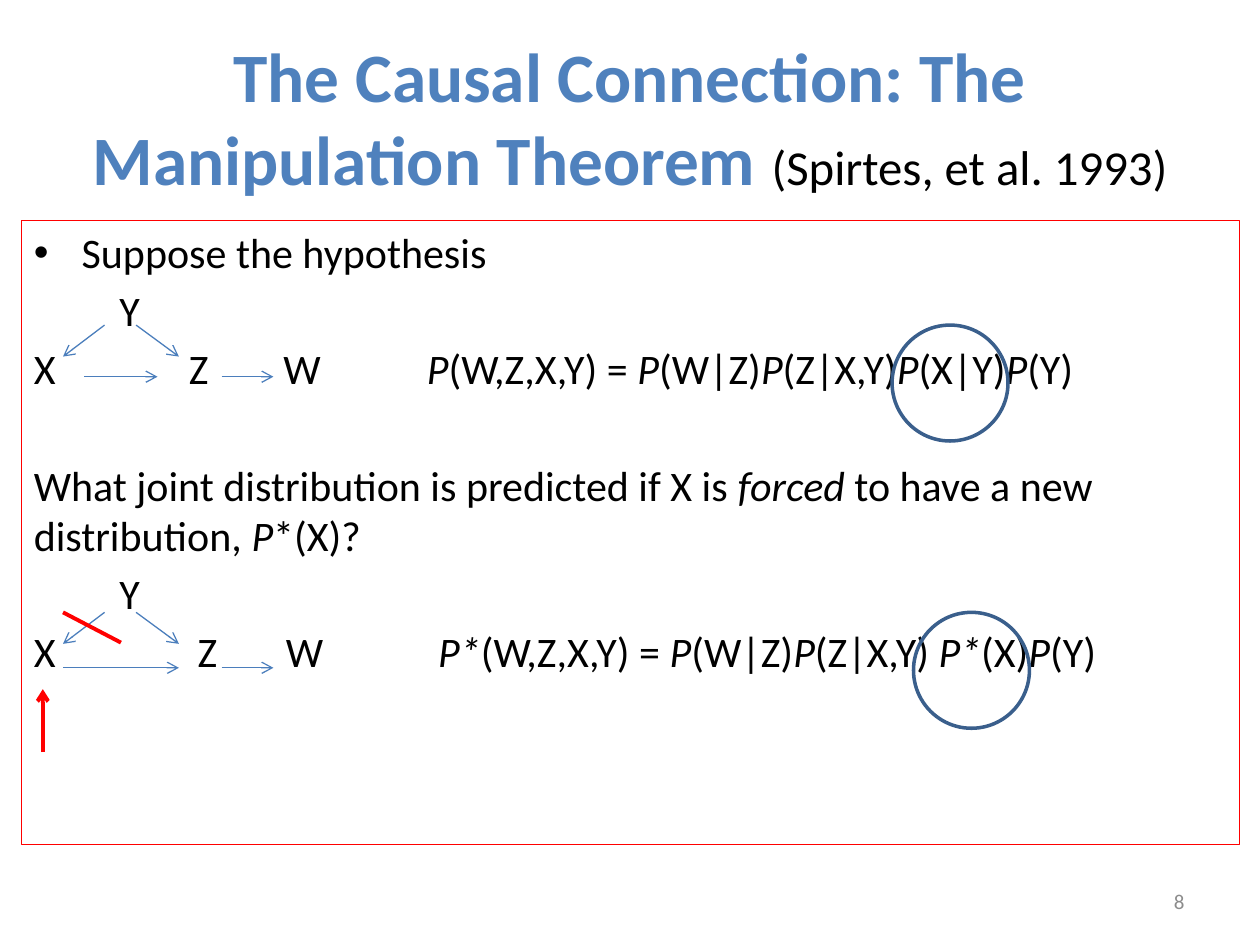
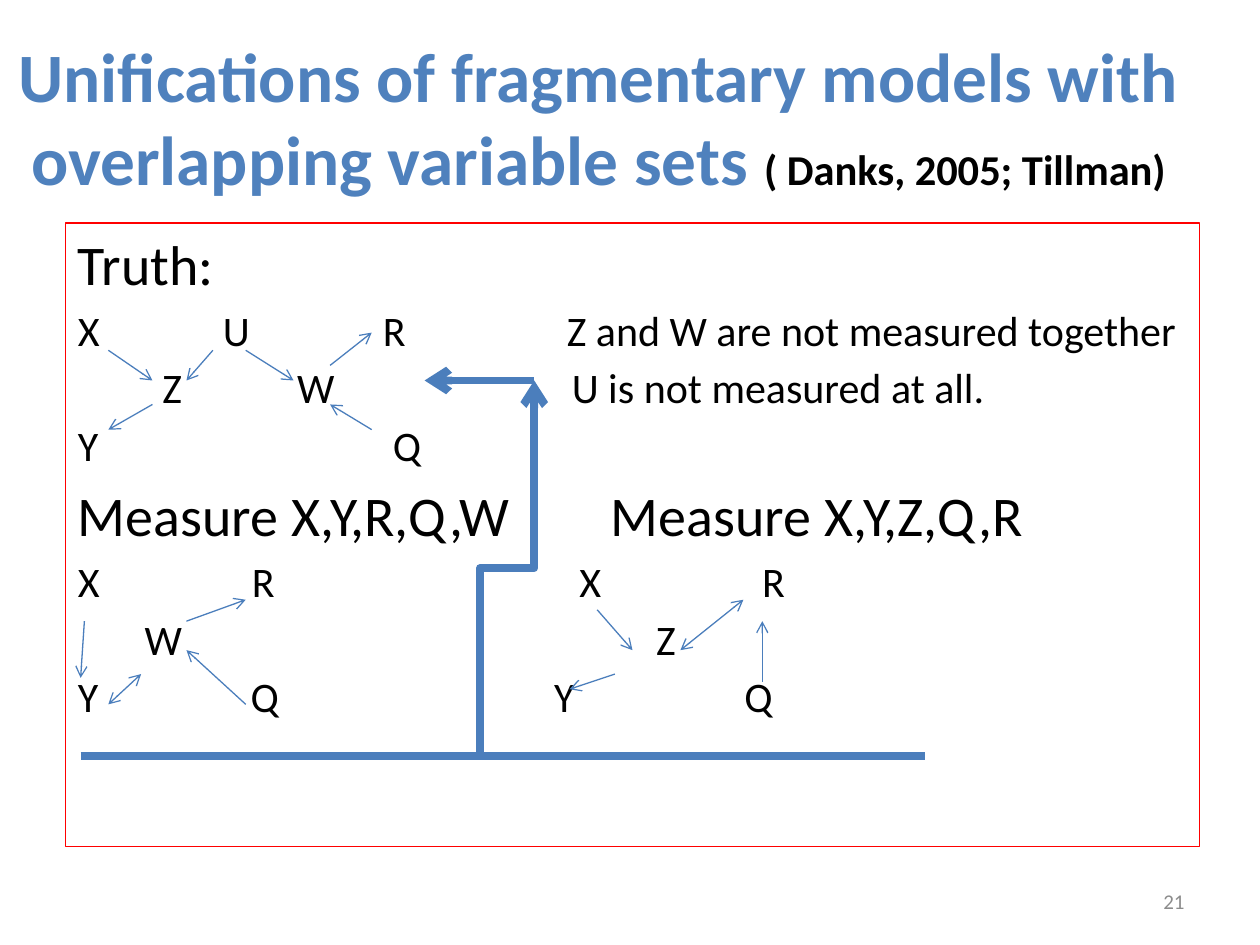
from lxml.etree import SubElement
from pptx import Presentation
from pptx.dml.color import RGBColor
from pptx.enum.shapes import MSO_CONNECTOR, MSO_SHAPE
from pptx.enum.text import MSO_ANCHOR, PP_ALIGN
from pptx.oxml.ns import qn
from pptx.util import Inches, Pt

C = {"title": "4F81BD", "text": "000000", "frame": "FF0000", "arrow": "4B7EBC",
     "ring": "3A5F8C", "number": "8C8C8C"}

prs = Presentation()
prs.slide_width, prs.slide_height = Inches(10), Inches(7.5)
# Grid: 10 columns by 7.5 rows
COL, ROW = prs.slide_width / 10, prs.slide_height / 7.5


def write(tf, text, size=24, color="text", bold=False, align=PP_ALIGN.LEFT,
          before=None, stops=(), bullet=False, new=True):
    """Add a paragraph, or runs to the last one; _words_ in underscores are italic."""
    p = tf.add_paragraph() if new and tf.text else tf.paragraphs[-1]
    p.alignment = align
    p.space_before = Pt(size * 0.18 if before is None else before)
    pPr = p._p.get_or_add_pPr()
    if bullet:
        indent = int(0.38 * COL)
        pPr.set("marL", str(indent))
        pPr.set("indent", str(-indent))
        SubElement(pPr, qn("a:buFont"), typeface="Arial")
        SubElement(pPr, qn("a:buChar"), char="•")
    if stops:
        tabs = SubElement(pPr, qn("a:tabLst"))
        for stop in stops:
            SubElement(tabs, qn("a:tab"), pos=str(int(stop * COL)), algn="l")
    for i, part in enumerate(text.split("_")):
        if part:
            r = p.add_run()
            r.text = part
            r.font.name, r.font.size = "Calibri", Pt(size)
            r.font.bold, r.font.italic = bold, i % 2 == 1
            r.font.color.rgb = RGBColor.from_string(C[color])


def connect(s, x1, y1, x2, y2, color="arrow", width=0.75, ends="tail",
            kind=MSO_CONNECTOR.STRAIGHT):
    """Draw a line between two grid points, with arrowheads at the named ends."""
    sp = s.shapes.add_connector(kind, int(x1 * COL), int(y1 * ROW),
                                int(x2 * COL), int(y2 * ROW))
    sp.line.color.rgb = RGBColor.from_string(C[color])
    sp.line.width = Pt(width)
    for end in ends.split():
        SubElement(sp.line._get_or_add_ln(), qn(f"a:{end}End"), type="arrow")
    SubElement(sp._element.spPr, qn("a:effectLst"))
    return sp


# Shared parts: title, framed body, slide number
pages = [
    dict(title="The Causal Connection: The Manipulation Theorem ",
         cite="(Spirtes, et al. 1993)", cite_size=27.9, cite_bold=False,
         title_at=(0.5, 9), body_at=(0.17, 1.75, 9.67), number="8"),
    dict(title="Unifications of fragmentary models with overlapping variable sets ",
         cite="( Danks, 2005; Tillman)", cite_size=24.3, cite_bold=True,
         title_at=(0, 9.5), body_at=(0.52, 1.77, 9), number="21"),
]
slides, bodies = [], []
for page in pages:
    s = prs.slides.add_slide(prs.slide_layouts[6])
    left, width = page["title_at"]
    tf = s.shapes.add_textbox(int(left * COL), int(0.3 * ROW),
                              int(width * COL), int(1.25 * ROW)).text_frame
    tf.word_wrap, tf.vertical_anchor = True, MSO_ANCHOR.MIDDLE
    write(tf, page["title"], 39.6, "title", True, PP_ALIGN.CENTER, 0)
    write(tf, page["cite"], page["cite_size"], bold=page["cite_bold"],
          align=PP_ALIGN.CENTER, before=0, new=False)

    left, top, width = page["body_at"]
    sp = s.shapes.add_shape(MSO_SHAPE.RECTANGLE, int(left * COL), int(top * ROW),
                            int(width * COL), int(4.95 * ROW))
    sp.shadow.inherit = False
    sp.fill.background()
    sp.line.color.rgb = RGBColor.from_string(C["frame"])
    sp.line.width = Pt(0.75)
    sp.text_frame.word_wrap = True
    sp.text_frame.vertical_anchor = MSO_ANCHOR.TOP

    tf = s.shapes.add_textbox(int(7.17 * COL), int(6.95 * ROW),
                              int(2.33 * COL), int(0.4 * ROW)).text_frame
    tf.word_wrap, tf.vertical_anchor = True, MSO_ANCHOR.MIDDLE
    write(tf, page["number"], 12, "number", align=PP_ALIGN.RIGHT, before=0)
    slides.append(s)
    bodies.append(sp.text_frame)

# Slide 1: the hypothesis before and after forcing X
s, tf = slides[0], bodies[0]
write(tf, "Suppose the hypothesis", bullet=True)
write(tf, "\tY", stops=[0.68])
write(tf, "X\tZ\tW\t_P_(W,Z,X,Y) = _P_(W|Z)_P_(Z|X,Y)_P_(X|Y)_P_(Y)",
      stops=[1.23, 1.98, 3.12])
write(tf, "What joint distribution is predicted if X is _forced_ to have a new "
      "distribution, _P_*(X)?", before=38)
write(tf, "\tY", stops=[0.68])
write(tf, "X\tZ\tW\t_P*_(W,Z,X,Y) = _P_(W|Z)_P_(Z|X,Y)_ P*_(X)_P_(Y)",
      stops=[1.3, 2, 3.21])

# Each graph: its top, the height of its X-Z-W arrows, the span of X to Z, its ring
for top, base, x_start, x_end, ring in [(2.58, 2.99, 0.67, 1.25, 7.08),
                                        (4.86, 5.3, 0.5, 1.42, 7.25)]:
    connect(s, 0.83, top, 0.5, top + 0.25)
    connect(s, 1.08, top, 1.42, top + 0.25)
    connect(s, x_start, base, x_end, base)
    connect(s, 1.76, base, 2.17, base)
    sp = s.shapes.add_shape(MSO_SHAPE.OVAL, int(ring * COL), int(top * ROW),
                            int(0.92 * COL), int(0.92 * ROW))
    sp.shadow.inherit = False
    sp.fill.background()
    sp.line.color.rgb = RGBColor.from_string(C["ring"])
    sp.line.width = Pt(2)

# The cut edge and the outside force on X
connect(s, 0.5, 4.86, 0.96, 5.1, "frame", 2.25, "")
connect(s, 0.34, 5.97, 0.34, 5.47, "frame", 2.25)

# Slide 2: the true graph and two partial measurements
s, tf = slides[1], bodies[1]
for text, size, stops in [
    ("Truth:", 32, []),
    ("X\tU\tR\tZ and W are not measured together", 24, [1.15, 2.42, 3.88]),
    ("\tZ\tW\tU is not measured at all.", 24, [0.67, 1.74, 3.92]),
    ("Y\tQ", 24, [2.5]),
    ("Measure X,Y,R,Q,W\tMeasure X,Y,Z,Q,R", 32, [4.23]),
    ("X\tR\tX\tR", 24, [1.38, 3.98, 5.43]),
    ("\tW\tZ", 24, [0.53, 4.59]),
    ("Y\tQ\tY\tQ", 24, [1.37, 3.78, 5.29]),
]:
    write(tf, text, size, stops=stops)

for edge in [
    # Truth
    (0.86, 2.78, 1.21, 3.02), (1.21, 3.21, 0.86, 3.41), (1.69, 2.78, 1.48, 3.02),
    (1.95, 2.78, 2.33, 3.02), (2.95, 3.41, 2.62, 3.21), (2.62, 2.9, 2.95, 2.64),
    # X,Y,R,Q,W
    (0.67, 4.93, 0.64, 5.38), (1.95, 5.59, 1.48, 5.16), (1.48, 4.93, 1.95, 4.76),
    # X,Y,Z,Q,R
    (4.74, 4.84, 5.02, 5.16), (4.88, 5.35, 4.52, 5.47), (6.05, 5.41, 6.05, 4.93),
]:
    connect(s, *edge)
for edge in [(1.12, 5.35, 0.86, 5.59), (5.9, 4.76, 5.4, 5.16)]:
    connect(s, *edge, ends="head tail")

# Thick path from the measurements back to the truth; the elbow is turned upright
x1, y1, x2, y2 = 3.81, 6, 4.24, 3.02
cx, cy, dx, dy = (x1 + x2) / 2, (y1 + y2) / 2, (y1 - y2) / 2, (x2 - x1) / 2
sp = connect(s, cx + dx, cy + dy, cx - dx, cy - dy, width=4.5,
             kind=MSO_CONNECTOR.ELBOW)
sp._element.spPr.find(qn("a:xfrm")).set("rot", str(90 * 60000))
connect(s, x2, y2, 3.37, y2, width=4.5)
connect(s, 0.64, y1, 7.34, y1, width=4.5, ends="")

prs.save("out.pptx")
